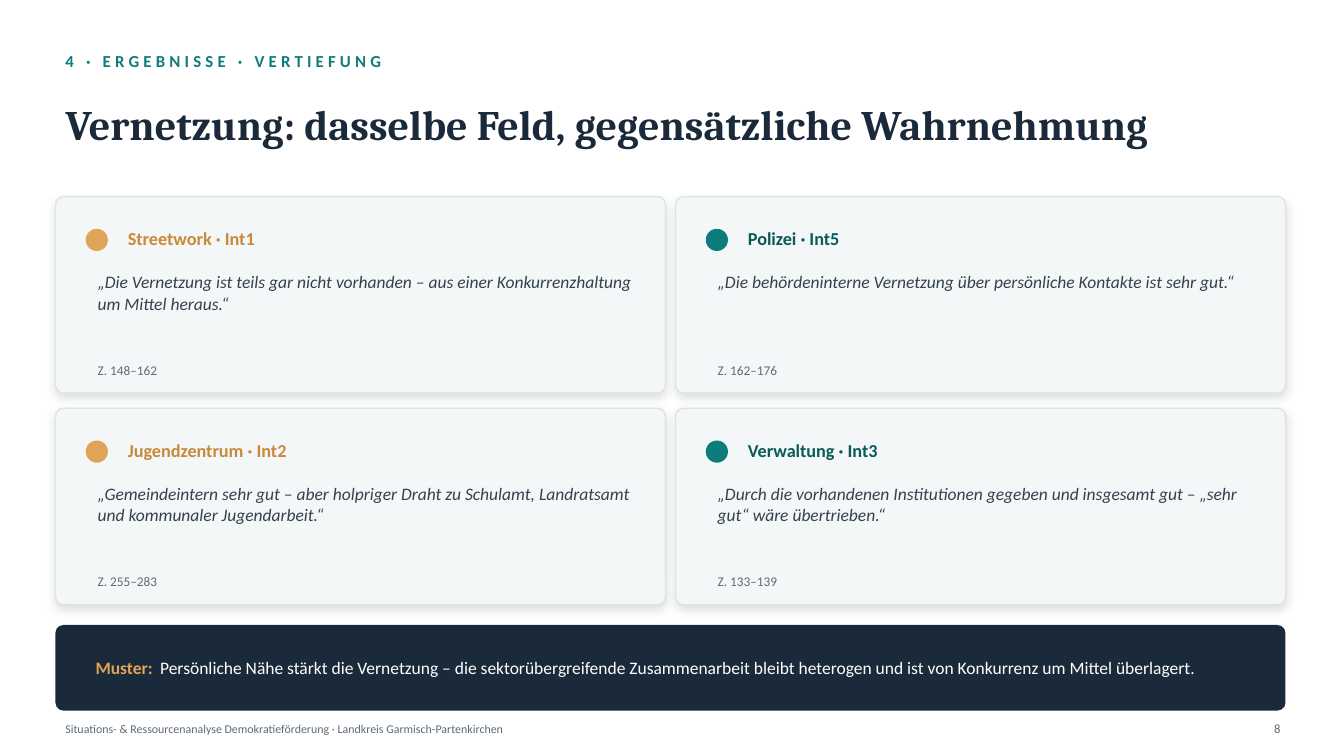
from lxml.etree import SubElement
from pptx import Presentation
from pptx.dml.color import RGBColor
from pptx.enum.shapes import MSO_SHAPE
from pptx.enum.text import MSO_ANCHOR, MSO_AUTO_SIZE, PP_ALIGN
from pptx.oxml.ns import qn
from pptx.util import Inches, Pt

COLORS = {
    "navy": "1B2A3A", "teal": "0E7C7B", "dark_teal": "0A5A59",
    "amber": "E0A458", "dark_amber": "C8893B", "card": "F4F7F8",
    "border": "DCE4E7", "quote": "33424E", "muted": "5C6B78", "white": "FFFFFF",
}

presentation = Presentation()
presentation.slide_width = Inches(13.33)
presentation.slide_height = Inches(7.5)
slide = presentation.slides.add_slide(presentation.slide_layouts[5])


def add_text(box, text, size, color, font="Calibri", bold=False, italic=False,
             shape=None, anchor=MSO_ANCHOR.MIDDLE):
    """Put one formatted paragraph in a new text box or the given shape."""
    left, top, width, height = map(Inches, box)
    if shape is None:
        shape = slide.shapes.add_textbox(left, top, width, height)
    else:
        shape.left, shape.top, shape.width, shape.height = left, top, width, height
    text_frame = shape.text_frame
    text_frame.text = text
    text_frame.word_wrap = True
    text_frame.auto_size = MSO_AUTO_SIZE.NONE
    text_frame.vertical_anchor = anchor
    paragraph = text_frame.paragraphs[0]
    paragraph.alignment = PP_ALIGN.LEFT
    for run in paragraph.runs:
        run.font.name = font
        run.font.size = Pt(size)
        run.font.bold = bold
        run.font.italic = italic
        run.font.color.rgb = RGBColor.from_string(COLORS[color])
    return paragraph


def add_panel(kind, box, fill, line=None, radius=None):
    """Draw a filled shape without the theme shadow."""
    shape = slide.shapes.add_shape(kind, *map(Inches, box))
    shape.shadow.inherit = False
    shape.fill.solid()
    shape.fill.fore_color.rgb = RGBColor.from_string(COLORS[fill])
    if line:
        shape.line.color.rgb = RGBColor.from_string(COLORS[line])
        shape.line.width = Pt(1)
    else:
        shape.line.fill.background()
    if radius:
        shape.adjustments[0] = radius / min(box[2:])
    return shape


# Section label and title
section = add_text((0.55, 0.45, 8, 0.3), "4 · ERGEBNISSE · VERTIEFUNG", 12, "teal", bold=True)
section.runs[0].font._element.set("spc", "300")
add_text((0.55, 0.78, 12.2, 0.9), "Vernetzung: dasselbe Feld, gegensätzliche Wahrnehmung",
         30, "navy", font="Cambria", bold=True, shape=slide.shapes.title)

# Quote cards: two columns by two rows, one accent per column
quotes = [
    ("Streetwork · Int1", "Z. 148–162",
     "„Die Vernetzung ist teils gar nicht vorhanden – aus einer Konkurrenzhaltung um Mittel heraus.“"),
    ("Polizei · Int5", "Z. 162–176",
     "„Die behördeninterne Vernetzung über persönliche Kontakte ist sehr gut.“"),
    ("Jugendzentrum · Int2", "Z. 255–283",
     "„Gemeindeintern sehr gut – aber holpriger Draht zu Schulamt, Landratsamt und kommunaler Jugendarbeit.“"),
    ("Verwaltung · Int3", "Z. 133–139",
     "„Durch die vorhandenen Institutionen gegeben und insgesamt gut – „sehr gut“ wäre übertrieben.“"),
]
accents = [("amber", "dark_amber"), ("teal", "dark_teal")]

for index, (speaker, source_lines, quote) in enumerate(quotes):
    row, column = divmod(index, 2)
    left = 0.55 + column * 6.15
    top = 1.95 + row * 2.1
    dot_color, speaker_color = accents[column]

    card = add_panel(MSO_SHAPE.ROUNDED_RECTANGLE, (left, top, 6.05, 1.95), "card", "border", 0.08)
    effects = card._element.spPr.find(qn("a:effectLst"))
    shadow = SubElement(effects, qn("a:outerShdw"), blurRad=str(Pt(7)), dist=str(Pt(3)),
                        dir="5400000", algn="bl", rotWithShape="0")
    shadow_color = SubElement(shadow, qn("a:srgbClr"), val="000000")
    SubElement(shadow_color, qn("a:alpha"), val="12000")

    add_panel(MSO_SHAPE.OVAL, (left + 0.3, top + 0.32, 0.22, 0.22), dot_color)
    add_text((left + 0.62, top + 0.24, 5.2, 0.35), speaker, 13, speaker_color, bold=True)
    paragraph = add_text((left + 0.32, top + 0.68, 5.5, 0.95), quote, 12.5, "quote",
                         italic=True, anchor=MSO_ANCHOR.TOP)
    paragraph.line_spacing = 1.04
    add_text((left + 0.32, top + 1.58, 5.4, 0.28), source_lines, 9.5, "muted")

# Conclusion bar: label, then a tab stop before the statement
add_panel(MSO_SHAPE.ROUNDED_RECTANGLE, (0.55, 6.2, 12.2, 0.85), "navy", radius=0.08)
conclusion = add_text((0.85, 6.32, 11.6, 0.6), "Muster:", 12.5, "amber", bold=True)
tab_stops = SubElement(conclusion._p.get_or_add_pPr(), qn("a:tabLst"))
SubElement(tab_stops, qn("a:tab"), pos=str(Inches(0.64)), algn="l")
statement = conclusion.add_run()
statement.text = ("\tPersönliche Nähe stärkt die Vernetzung – die sektorübergreifende Zusammenarbeit "
                  "bleibt heterogen und ist von Konkurrenz um Mittel überlagert.")
statement.font.name = "Calibri"
statement.font.size = Pt(12.5)
statement.font.bold = False
statement.font.color.rgb = RGBColor.from_string(COLORS["white"])

# Footer and page number
add_text((0.55, 7.08, 10, 0.3),
         "Situations- & Ressourcenanalyse Demokratieförderung · Landkreis Garmisch-Partenkirchen",
         8.5, "muted")
page_number = add_text((12.4, 7.08, 0.4, 0.3), "8", 9, "muted")
page_number.alignment = PP_ALIGN.RIGHT

presentation.save("out.pptx")
